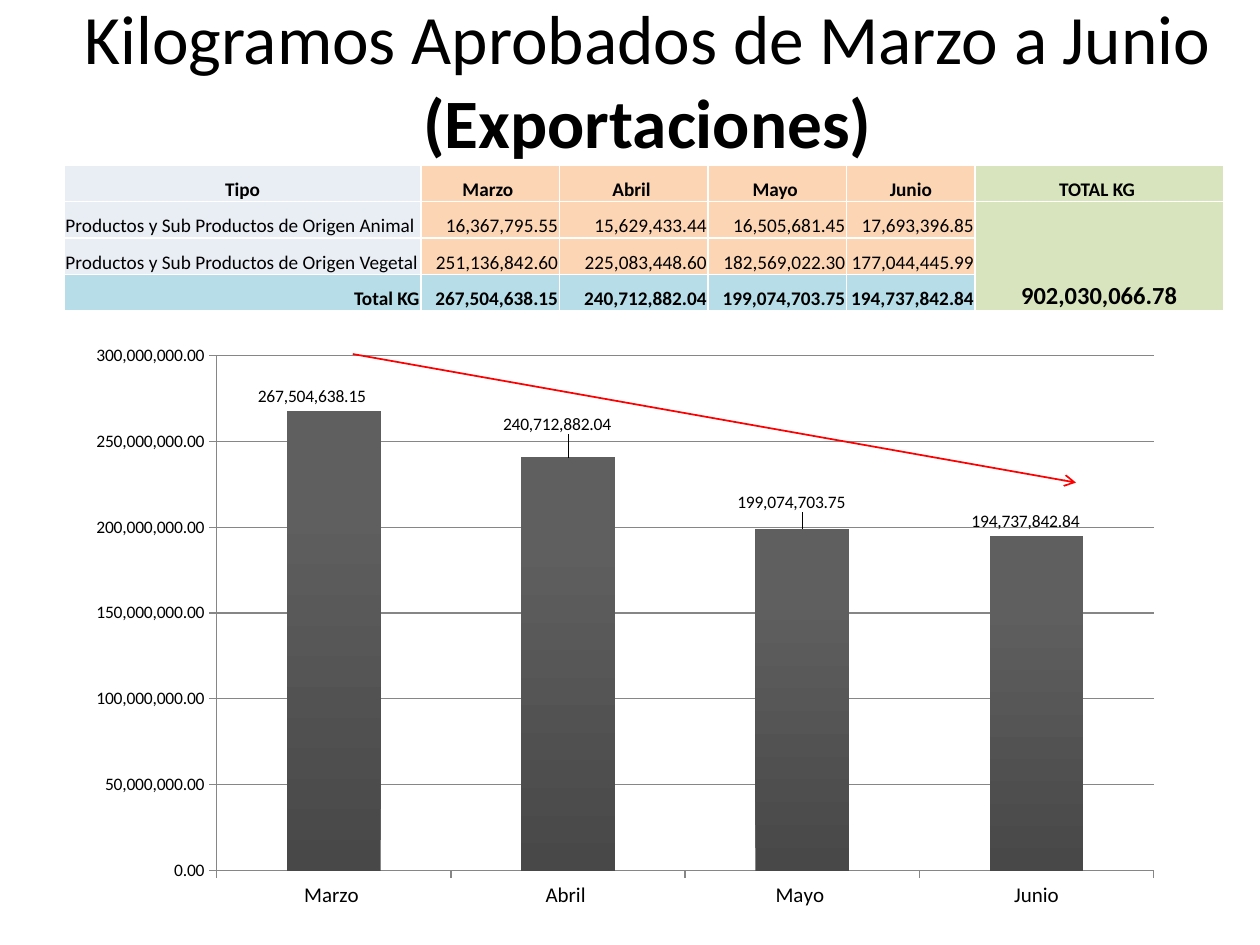
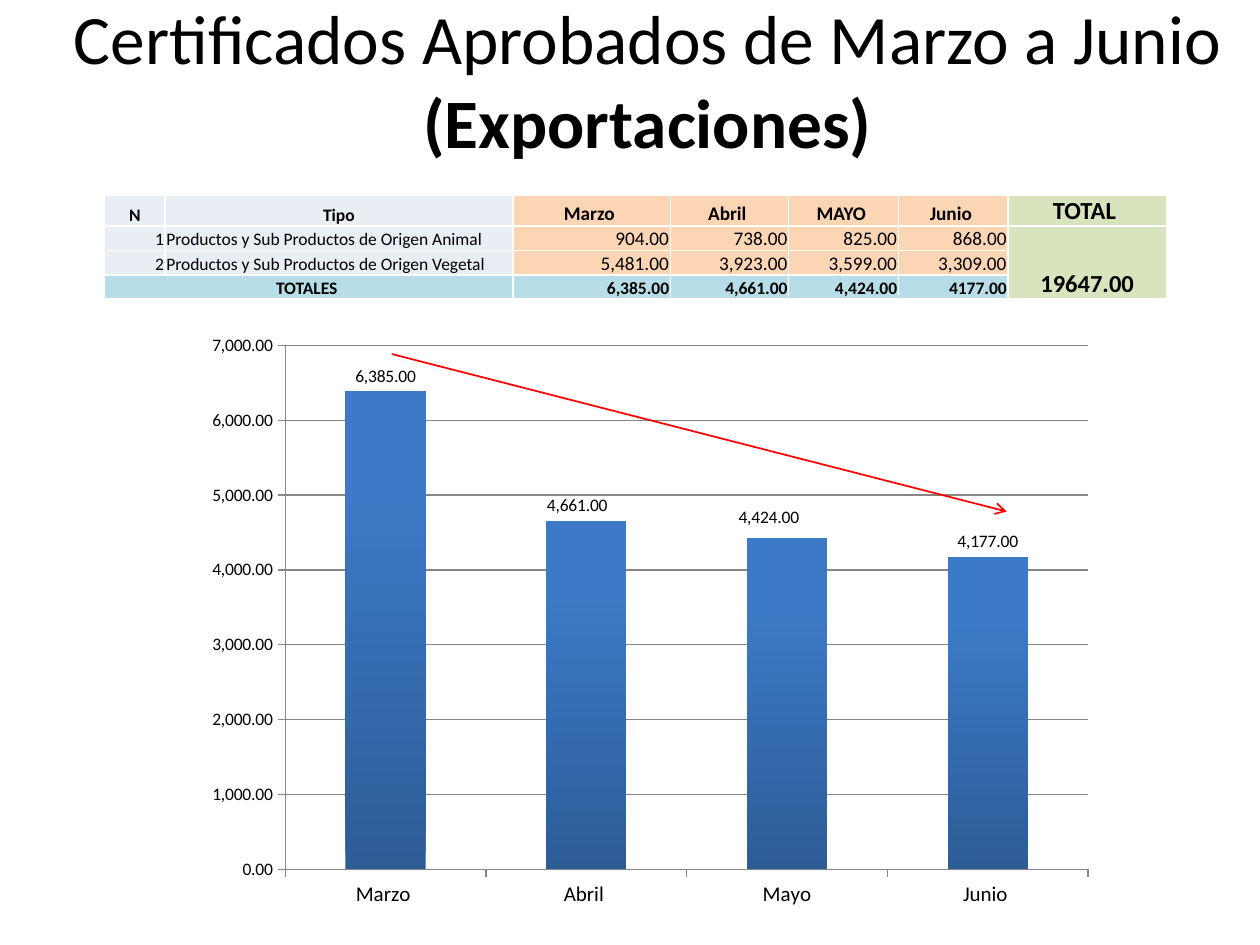
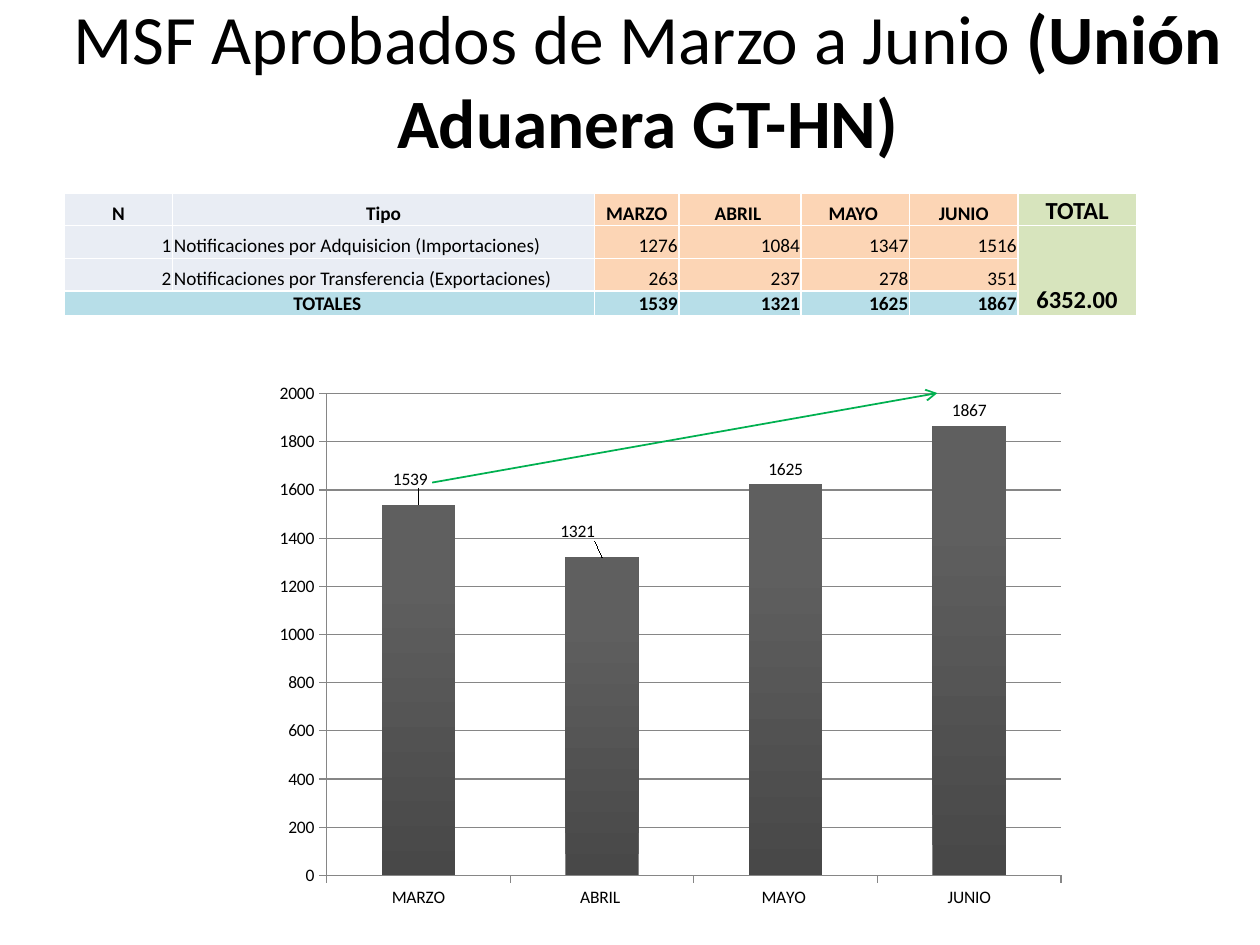
import pptx
import pptx.chart.data
import pptx.dml.color
import pptx.enum.chart
import pptx.enum.shapes
import pptx.enum.text
import pptx.oxml
import pptx.oxml.ns
import pptx.util
from lxml import etree

Inches, Pt = pptx.util.Inches, pptx.util.Pt
ALIGN = pptx.enum.text.PP_ALIGN
ANCHOR = pptx.enum.text.MSO_ANCHOR
qn = pptx.oxml.ns.qn

COLORS = {
    "text": "000000", "border": "FFFFFF", "axis": "868686",
    "label": "E9EDF4", "month": "FCD5B5", "sum": "B7DEE8", "total": "D7E4BD",
    "down": "FF0000", "up": "00B050",
}
BARS = {"gray": ("484848", "5F5F5F"), "blue": ("2D5C97", "3C7AC7")}
FONT = "Calibri"


def rgb(name):
    return pptx.dml.color.RGBColor.from_string(COLORS.get(name, name))


def set_font(font, size, bold=False):
    font.name, font.size, font.bold = FONT, Pt(size), bold
    font.color.rgb = rgb("text")


def write(tf, text, size=11, bold=False, align=ALIGN.LEFT):
    """Add a formatted run to the last paragraph of a text frame."""
    p = tf.paragraphs[-1]
    p.alignment = align
    r = p.add_run()
    r.text = text
    set_font(r.font, size, bold)


def border_cell(cell):
    tcPr = cell._tc.get_or_add_tcPr()
    for i, side in enumerate(("lnL", "lnR", "lnT", "lnB")):
        ln = etree.Element(qn(f"a:{side}"), w=str(Pt(1)))
        fill = etree.SubElement(ln, qn("a:solidFill"))
        etree.SubElement(fill, qn("a:srgbClr"), val=COLORS["border"])
        tcPr.insert(i, ln)


def shift_label(series, index, dx, dy):
    """Move one data label by a fraction of the chart's width and height."""
    series.points[index].data_label.position = (
        pptx.enum.chart.XL_LABEL_POSITION.OUTSIDE_END)
    idx = series._element.find(f"{qn('c:dLbls')}/{qn('c:dLbl')}/{qn('c:idx')}[@val='{index}']")
    layout = etree.Element(qn("c:layout"))
    manual = etree.SubElement(layout, qn("c:manualLayout"))
    for axis, value in (("x", dx), ("y", dy)):
        etree.SubElement(manual, qn(f"c:{axis}"), val=str(value))
    idx.addnext(layout)


class Deck:
    def __init__(self):
        self.prs = pptx.Presentation()
        self.prs.slide_width, self.prs.slide_height = Inches(10), Inches(7.5)
        self.s = None

    def new_slide(self):
        self.s = self.prs.slides.add_slide(self.prs.slide_layouts[6])

    def title(self, plain, strong):
        sp = self.s.shapes.add_textbox(Inches(0.28), 0, Inches(9.72), Inches(1.25))
        tf = sp.text_frame
        tf.word_wrap = True
        tf.vertical_anchor = ANCHOR.MIDDLE
        write(tf, plain, size=39.6, align=ALIGN.CENTER)
        write(tf, strong, size=39.6, bold=True, align=ALIGN.CENTER)

    def table(self, at, cols, heights, rows, label_size=11, total_head_size=14,
              sum_align=ALIGN.CENTER):
        """Table of label columns, four months and a total column."""
        last_row, last_col = len(rows) - 1, len(cols) - 1
        labels = last_col - 4
        frame = self.s.shapes.add_table(
            len(rows), len(cols), Inches(at[0]), Inches(at[1]),
            Inches(sum(cols)), Inches(sum(heights)))
        tbl = frame.table
        tbl.first_row = tbl.horz_banding = False
        for col, width in zip(tbl.columns, cols):
            col.width = Inches(width)
        for row, height in zip(tbl.rows, heights):
            row.height = Inches(height)
        tbl.cell(1, last_col).merge(tbl.cell(last_row, last_col))
        if labels > 1:
            tbl.cell(last_row, 0).merge(tbl.cell(last_row, labels - 1))

        for i, texts in enumerate(rows):
            for j, text in enumerate(texts):
                is_label, is_total, is_sum = j < labels, j == last_col, i == last_row
                size = label_size if is_label or is_sum else 11
                align = ALIGN.LEFT if j == labels - 1 else ALIGN.RIGHT
                kind = "label" if is_label else "month"
                if is_sum:
                    kind = "sum"
                    align = sum_align if is_label else ALIGN.RIGHT
                if is_total:
                    kind = "total"
                    size = 14 if i else total_head_size
                if i == 0 or is_total:
                    align = ALIGN.CENTER
                cell = tbl.cell(i, j)
                cell.fill.solid()
                cell.fill.fore_color.rgb = rgb(kind)
                cell.vertical_anchor = ANCHOR.BOTTOM
                cell.margin_left = cell.margin_right = cell.margin_top = Inches(0.01)
                cell.margin_bottom = 0
                border_cell(cell)
                if text:
                    write(cell.text_frame, text, size=size, align=align,
                          bold=i == 0 or is_sum or is_total)

    def column_chart(self, box, cats, values, bars, fmt, cat_size=12, shifts=None):
        data = pptx.chart.data.CategoryChartData(number_format=fmt)
        data.categories = cats
        data.add_series("Series 1", values)
        chart = self.s.shapes.add_chart(
            pptx.enum.chart.XL_CHART_TYPE.COLUMN_CLUSTERED, *map(Inches, box), data).chart
        chart.has_legend = chart.has_title = False
        set_font(chart.font, 10)
        plot = chart.plots[0]
        plot.gap_width, plot.vary_by_categories = 150, False

        value_axis, cat_axis = chart.value_axis, chart.category_axis
        value_axis.has_major_gridlines = True
        value_axis.tick_labels.number_format = fmt
        value_axis.tick_labels.number_format_is_linked = False
        for axis, size in ((value_axis, 10), (cat_axis, cat_size)):
            axis.major_tick_mark = pptx.enum.chart.XL_TICK_MARK.OUTSIDE
            set_font(axis.tick_labels.font, size)
        for part in (value_axis, cat_axis, value_axis.major_gridlines):
            part.format.line.color.rgb = rgb("axis")
            part.format.line.width = Pt(0.75)

        series = plot.series[0]
        fill = series.format.fill
        fill.gradient()
        fill.gradient_angle = 90
        for stop, color, position in zip(fill.gradient_stops, BARS[bars], (0, 0.8)):
            stop.color.rgb = rgb(color)
            stop.position = position
        dl = series.data_labels
        dl.show_value = True
        dl.number_format, dl.number_format_is_linked = fmt, False
        dl.position = pptx.enum.chart.XL_LABEL_POSITION.OUTSIDE_END
        set_font(dl.font, 10)
        for index, (dx, dy) in (shifts or {}).items():
            shift_label(series, index, dx, dy)

    def trend_arrow(self, start, end, color):
        line = self.s.shapes.add_connector(
            pptx.enum.shapes.MSO_CONNECTOR.STRAIGHT, *map(Inches, start + end))
        line.line.color.rgb = rgb(color)
        line.line.width = Pt(1)
        etree.SubElement(line.line._get_or_add_ln(), qn("a:tailEnd"), type="arrow")
        etree.SubElement(line._element.spPr, qn("a:effectLst"))


def kilograms(deck):
    deck.new_slide()
    deck.title("Kilogramos Aprobados de Marzo a Junio ", "(Exportaciones)")
    deck.table(
        (0.51, 1.31), [2.83, 1.1, 1.18, 1.1, 1.02, 1.97], [0.29] * 4,
        [["Tipo", "Marzo ", "Abril ", "Mayo ", "Junio", "TOTAL KG "],
         ["Productos y Sub Productos de Origen Animal", "16,367,795.55",
          "15,629,433.44", "16,505,681.45", "17,693,396.85", "902,030,066.78"],
         ["Productos y Sub Productos de Origen Vegetal", "251,136,842.60",
          "225,083,448.60", "182,569,022.30", "177,044,445.99", ""],
         ["Total KG", "267,504,638.15", "240,712,882.04", "199,074,703.75",
          "194,737,842.84", ""]],
        total_head_size=11, sum_align=ALIGN.RIGHT)
    deck.column_chart(
        (0.59, 2.65, 8.74, 4.65), ["Marzo ", "Abril ", "Mayo ", "Junio"],
        [267504638.15, 240712882.04, 199074703.75, 194737842.84], "gray", "#,##0.00",
        shifts={0: (-0.02, 0), 1: (-0.01, -0.03), 2: (-0.01, -0.02), 3: (-0.01, 0)})
    deck.trend_arrow((2.8, 2.81), (8.54, 3.83), "down")


def certificates(deck):
    deck.new_slide()
    deck.title("Certificados Aprobados de Marzo a Junio ", "(Exportaciones)")
    deck.table(
        (0.83, 1.55), [0.48, 2.76, 1.25, 0.94, 0.87, 0.87, 1.26], [0.24] + [0.19] * 3,
        [["N", "Tipo", "Marzo ", "Abril ", "MAYO ", "Junio ", "TOTAL "],
         ["1", "Productos y Sub Productos de Origen Animal",
          "904.00", "738.00", "825.00", "868.00", "19647.00"],
         ["2", "Productos y Sub Productos de Origen Vegetal",
          "5,481.00", "3,923.00", "3,599.00", "3,309.00", ""],
         ["TOTALES ", "", "6,385.00", "4,661.00", "4,424.00", "4177.00", ""]],
        label_size=10)
    deck.column_chart(
        (1.54, 2.57, 7.24, 4.72), ["Marzo ", "Abril ", "Mayo", "Junio "],
        [6385, 4661, 4424, 4177], "blue", "#,##0.00",
        shifts={1: (-0.01, 0), 2: (-0.02, -0.01)})
    deck.trend_arrow((3.11, 2.81), (7.99, 4.06), "down")


def customs_union(deck):
    deck.new_slide()
    deck.title("MSF Aprobados de Marzo a Junio ", "(Unión Aduanera GT-HN)")
    months = ["MARZO", "ABRIL ", "MAYO ", "JUNIO"]
    deck.table(
        (0.51, 1.53), [0.86, 3.35, 0.67, 0.97, 0.86, 0.86, 0.94], [0.26] * 3 + [0.19],
        [["N", "Tipo", *months, "TOTAL"],
         ["1", "Notificaciones por Adquisicion (Importaciones)",
          "1276", "1084", "1347", "1516", "6352.00"],
         ["2", "Notificaciones por Transferencia (Exportaciones)",
          "263", "237", "278", "351", ""],
         ["TOTALES ", "", "1539", "1321", "1625", "1867", ""]])
    deck.column_chart(
        (2.09, 2.96, 6.46, 4.33), months, [1539, 1321, 1625, 1867], "gray", "General",
        cat_size=10, shifts={0: (-0.01, -0.02), 1: (-0.03, -0.02)})
    deck.trend_arrow((3.43, 3.83), (7.44, 3.12), "up")


def main():
    deck = Deck()
    kilograms(deck)
    certificates(deck)
    customs_union(deck)
    deck.prs.save("out.pptx")


if __name__ == "__main__":
    main()
